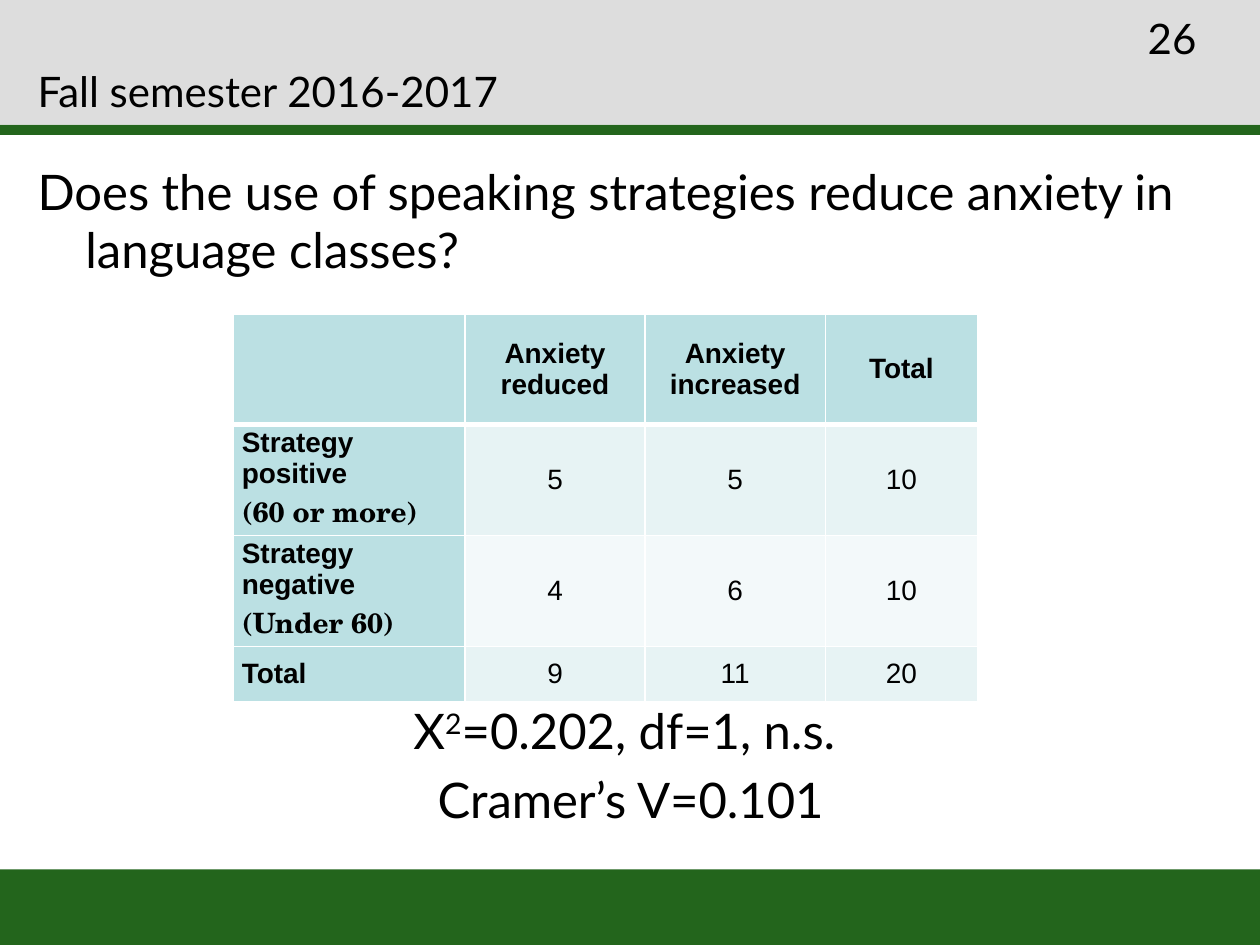
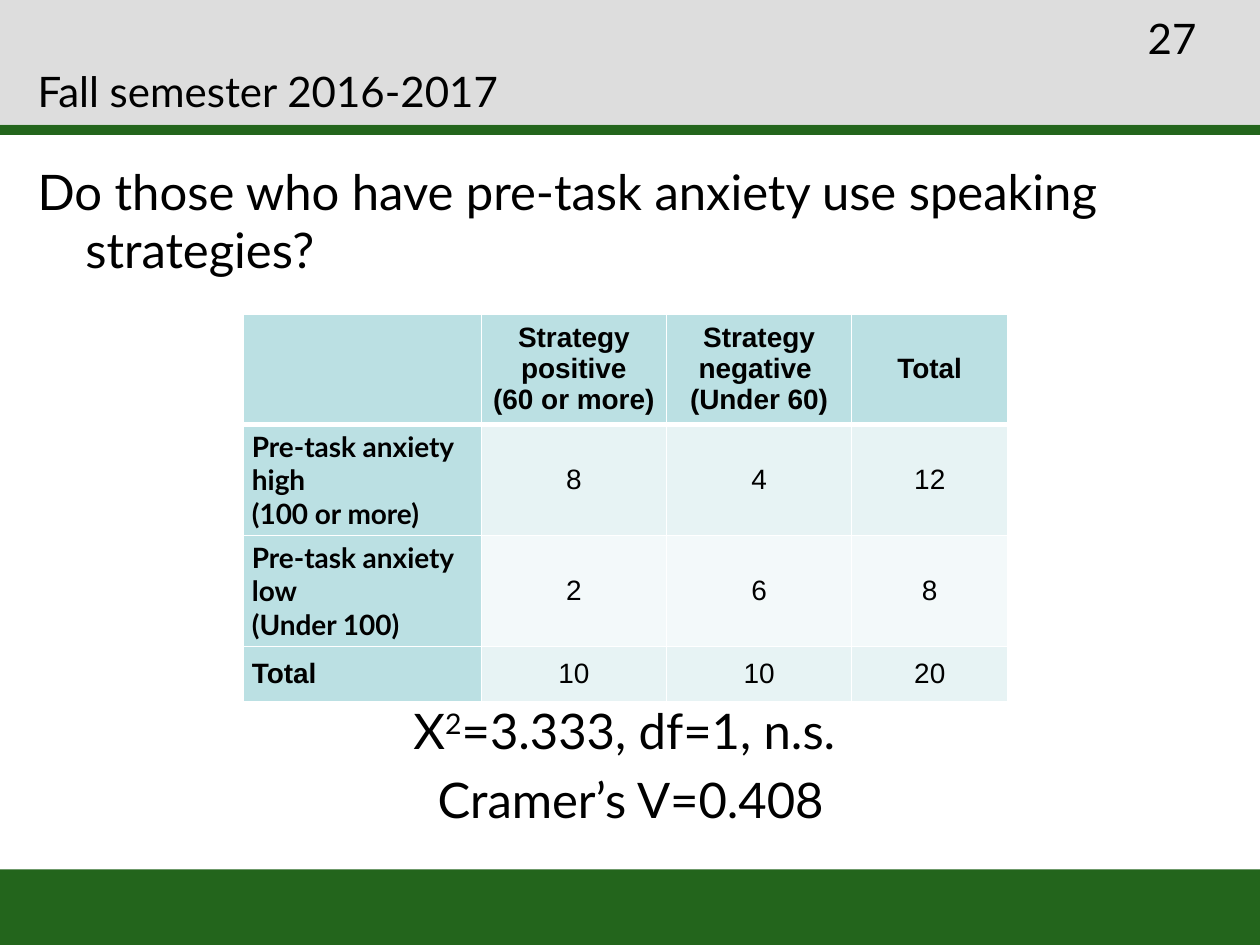
import pptx
import pptx.util
import pptx.dml.color
import pptx.enum.shapes
import pptx.enum.text
import pptx.oxml
import pptx.oxml.ns

GREEN, GRAY, TEAL, WHITE, BLACK = "23651C", "DDDDDD", "BBE0E3", "FFFFFF", "000000"
BODY_FILLS = ["E7F3F4", "F3F9FA"]
LATO, ARIAL, SCHOLA = "Lato", "Arial", "TeX Gyre Schola"
CENTER = pptx.enum.text.PP_ALIGN.CENTER
LEFT = pptx.enum.text.PP_ALIGN.LEFT
MIDDLE = pptx.enum.text.MSO_ANCHOR.MIDDLE
TOP = pptx.enum.text.MSO_ANCHOR.TOP

prs = pptx.Presentation()
prs.slide_width = pptx.util.Inches(10)
prs.slide_height = pptx.util.Inches(7.5)
COL = prs.slide_width / 100
ROW = prs.slide_height / 75


def rgb(color):
    return pptx.dml.color.RGBColor.from_string(color)


def write(tf, text, size=28, font=LATO, bold=False, align=LEFT, before=0,
          hang=0, raised=0, same_line=False):
    p = tf.paragraphs[-1]
    if p.runs and not same_line:
        p = tf.add_paragraph()
    if not same_line:
        p.alignment = align
        p.space_before = pptx.util.Pt(before)
        pPr = p._p.get_or_add_pPr()
        pPr.set("marL", str(int(hang * COL)))
        pPr.set("indent", str(int(-hang * COL)))
    r = p.add_run()
    r.text = text
    r.font.size = pptx.util.Pt(size)
    r.font.name = font
    r.font.bold = bold
    r.font.color.rgb = rgb(BLACK)
    if raised:
        r._r.get_or_add_rPr().set("baseline", str(raised * 1000))


BANDS = [(69, 6, GREEN), (0, 9.9, GRAY), (9.9, 0.8, GREEN)]

SLIDES = [
    {
        "number": "26",
        "question": "Does the use of speaking strategies reduce anxiety in language classes?",
        "chi": "0.202", "cramer": "0.101",
        "left": 18.5, "cols": [18.4, 14.3, 14.3, 12.1], "label_fonts": [ARIAL, SCHOLA],
        "rows": [
            ["", "Anxiety reduced", "Anxiety increased", "Total"],
            ["Strategy positive\n(60 or more)", "5", "5", "10"],
            ["Strategy negative\n(Under 60)", "4", "6", "10"],
            ["Total", "9", "11", "20"],
        ],
    },
    {
        "number": "27",
        "question": "Do those who have pre-task anxiety use speaking strategies?",
        "chi": "3.333", "cramer": "0.408",
        "left": 19.3, "cols": [18.9, 14.7, 14.7, 12.4], "label_fonts": [LATO, LATO],
        "rows": [
            ["", "Strategy positive\n(60 or more)", "Strategy negative \n(Under 60)", "Total"],
            ["Pre-task anxiety high\n(100 or more)", "8", "4", "12"],
            ["Pre-task anxiety low\n(Under 100)", "2", "6", "8"],
            ["Total", "10", "10", "20"],
        ],
    },
]
ROW_HEIGHTS = [8.8, 8.8, 8.8, 4.4]
BOXES = {
    "title": (2, 4.4, 82.7, 5.6, MIDDLE),
    "question": (2, 12.3, 96.1, 11, TOP),
    "result": (2, 55.1, 96.1, 11.5, TOP),
    "number": (90.1, 0.5, 8.8, 5.3, TOP),
}

for data in SLIDES:
    s = prs.slides.add_slide(prs.slide_layouts[6])
    for top, height, color in BANDS:
        sp = s.shapes.add_shape(pptx.enum.shapes.MSO_SHAPE.RECTANGLE, 0, int(top * ROW),
                                prs.slide_width, int(height * ROW))
        sp.shadow.inherit = False
        sp.fill.solid()
        sp.fill.fore_color.rgb = rgb(color)
        sp.line.fill.background()

    frames = {}
    for name, (left, top, width, height, anchor) in BOXES.items():
        sp = s.shapes.add_textbox(int(left * COL), int(top * ROW), int(width * COL), int(height * ROW))
        tf = sp.text_frame
        tf.word_wrap = True
        tf.vertical_anchor = anchor
        frames[name] = tf
    write(frames["title"], "Fall semester 2016-2017", size=24)
    write(frames["number"], data["number"], size=24)
    write(frames["question"], data["question"], hang=3.8)
    write(frames["result"], "Χ", align=CENTER)
    write(frames["result"], "2", raised=30, same_line=True)
    write(frames["result"], f"={data['chi']}, df=1, n.s. ", same_line=True)
    write(frames["result"], f"Cramer’s V={data['cramer']}", align=CENTER, before=5.6)

    table = s.shapes.add_table(4, 4, int(data["left"] * COL), int(24.9 * ROW),
                               int(sum(data["cols"]) * COL), int(sum(ROW_HEIGHTS) * ROW)).table
    for j, width in enumerate(data["cols"]):
        table.columns[j].width = int(width * COL)
    for i, height in enumerate(ROW_HEIGHTS):
        table.rows[i].height = int(height * ROW)
        for j, text in enumerate(data["rows"][i]):
            cell = table.cell(i, j)
            cell.vertical_anchor = MIDDLE
            cell.margin_left = cell.margin_right = int(0.7 * COL)
            cell.margin_top = cell.margin_bottom = 0
            tcPr = cell._tc.get_or_add_tcPr()
            for side in "LRTB":
                thick = (i, side) in [(0, "B"), (1, "T")]
                tcPr.append(pptx.oxml.parse_xml(
                    f'<a:ln{side} {pptx.oxml.ns.nsdecls("a")} w="{38100 if thick else 12700}">'
                    f'<a:solidFill><a:srgbClr val="{WHITE}"/></a:solidFill></a:ln{side}>'))
            heading = i == 0 or j == 0
            cell.fill.solid()
            cell.fill.fore_color.rgb = rgb(TEAL if heading else BODY_FILLS[(i - 1) % 2])
            if not text:
                continue
            label = j == 0 and i < 3
            for k, line in enumerate(text.split("\n")):
                font = data["label_fonts"][k] if label else ARIAL
                write(cell.text_frame, line, size=16, font=font, bold=heading,
                      align=CENTER if j else LEFT)

prs.save("out.pptx")
